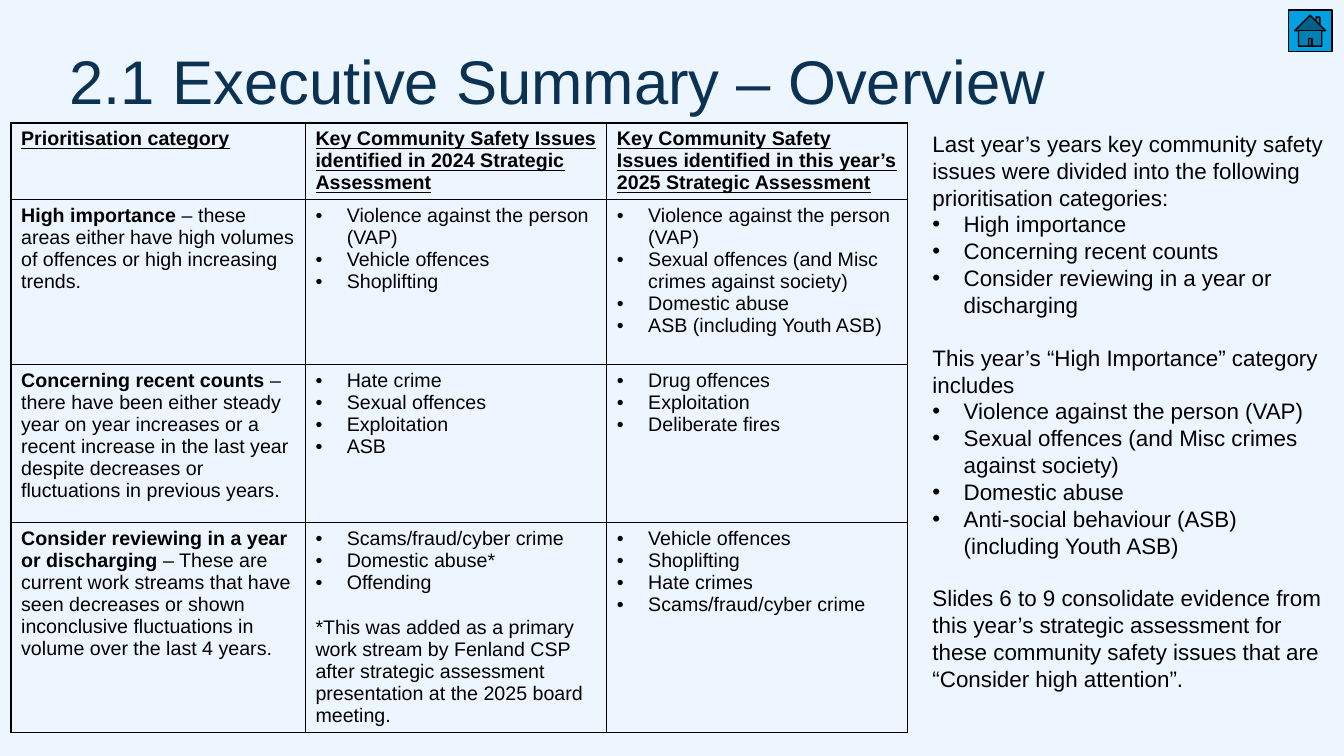
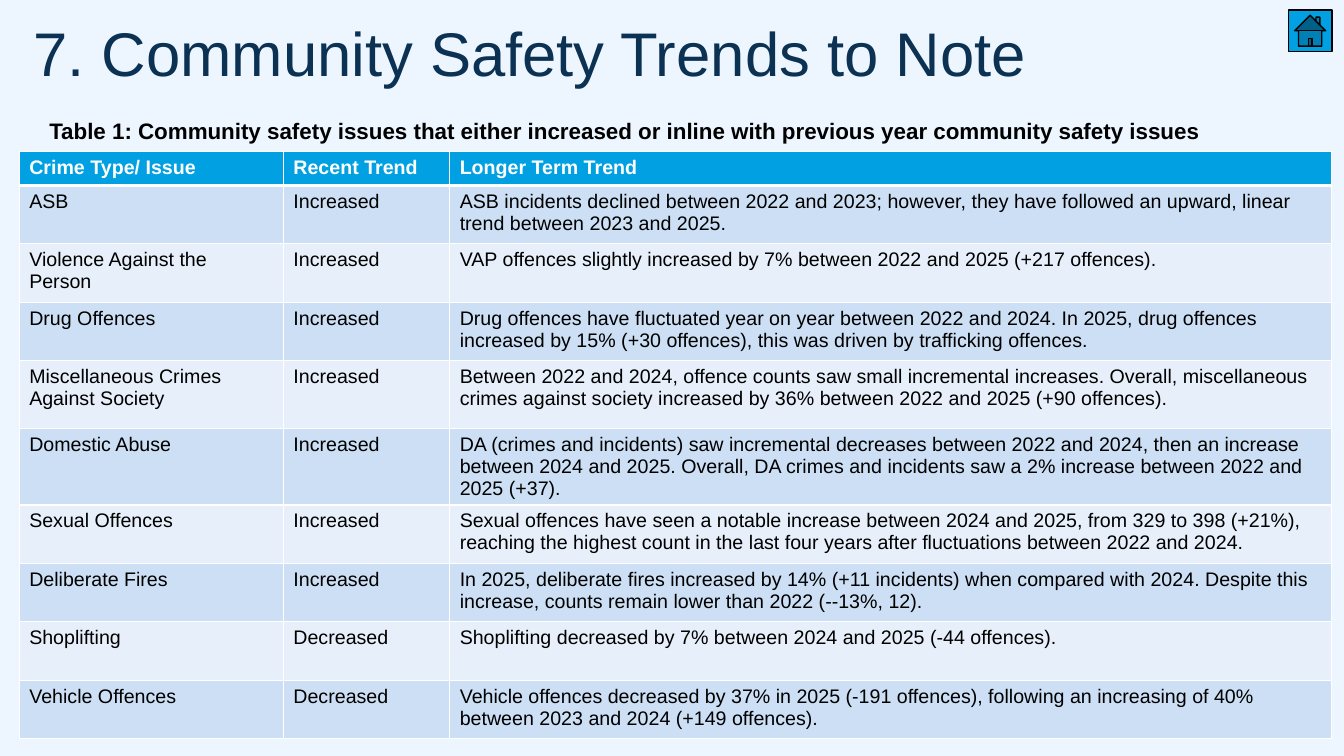
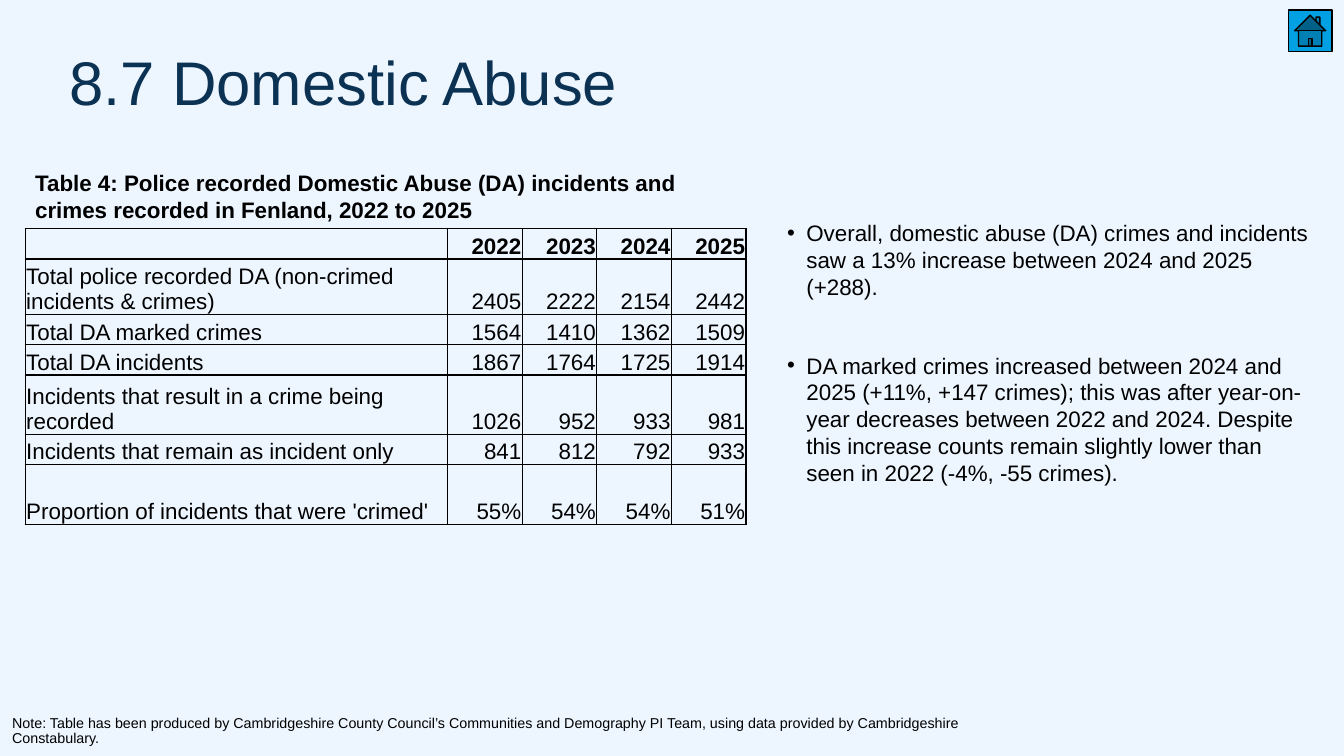
from dataclasses import dataclass

from lxml.etree import SubElement
from pptx import Presentation
from pptx.dml.color import RGBColor
from pptx.enum.shapes import MSO_SHAPE
from pptx.enum.text import MSO_ANCHOR, MSO_AUTO_SIZE, PP_ALIGN
from pptx.oxml.ns import qn
from pptx.util import Inches, Pt


@dataclass(frozen=True)
class Theme:
    font: str = "Arial"
    background: str = "EDF6FF"
    title: str = "0B3153"
    ink: str = "000000"
    white: str = "FFFFFF"
    accent: str = "00A0E2"
    bands: tuple = ("CCDFF4", "E7F0FA")
    title_size: float = 44
    body_size: float = 16
    table_size: float = 14
    note_size: float = 10.2


THEME = Theme()


@dataclass(frozen=True)
class Para:
    """One paragraph: an optional bold lead-in, then the text."""
    text: str
    lead: str = ""
    bullet: bool = False
    before: float = 0


@dataclass(frozen=True)
class Style:
    size: float = THEME.body_size
    color: str = THEME.ink
    bold: bool = False
    underline: bool = False
    align: PP_ALIGN = PP_ALIGN.LEFT
    spacing: float = 1.0
    indent: float = 0.31


BODY = Style()
CAPTION = Style(bold=True)
CELL = Style(size=THEME.table_size)


def bullets(*texts):
    return [Para(text, bullet=True) for text in texts]


def rgb(value):
    return RGBColor.from_string(value)


def add_bullet(paragraph, indent):
    props = paragraph._p.get_or_add_pPr()
    props.set("marL", str(Inches(indent)))
    props.set("indent", str(-Inches(indent)))
    SubElement(props, qn("a:buFont")).set("typeface", THEME.font)
    SubElement(props, qn("a:buChar")).set("char", "•")


def write(frame, content, style):
    """Fill a text frame from a string or a list of Para."""
    paras = [Para(content)] if isinstance(content, str) else content
    for number, para in enumerate(paras):
        paragraph = frame.add_paragraph() if number else frame.paragraphs[0]
        if para.bullet:
            add_bullet(paragraph, style.indent)
        paragraph.alignment = style.align
        paragraph.line_spacing = style.spacing
        paragraph.space_before = Pt(para.before)
        font = paragraph.font
        font.name, font.size = THEME.font, Pt(style.size)
        font.bold, font.underline = style.bold, style.underline
        font.color.rgb = rgb(style.color)
        if para.lead:
            lead = paragraph.add_run()
            lead.text = para.lead
            lead.font.bold = True
        if para.text:
            paragraph.add_run().text = para.text


def set_insets(holder, left, top, right, bottom):
    holder.margin_left, holder.margin_top = Inches(left), Inches(top)
    holder.margin_right, holder.margin_bottom = Inches(right), Inches(bottom)


def add_text(slide, box, content, style=BODY):
    frame = slide.shapes.add_textbox(*map(Inches, box)).text_frame
    frame.word_wrap = True
    write(frame, content, style)
    return frame


def add_home_button(slide):
    button = slide.shapes.add_shape(
        MSO_SHAPE.ACTION_BUTTON_HOME, *map(Inches, (12.78, 0.1, 0.43, 0.41)))
    button.shadow.inherit = False
    button.fill.solid()
    button.fill.fore_color.rgb = rgb(THEME.accent)
    button.line.color.rgb = rgb(THEME.ink)
    button.line.width = Pt(1)


def add_titled_slide(prs, title, left, top):
    slide = prs.slides.add_slide(prs.slide_layouts[5])
    heading = slide.shapes.title
    heading.left, heading.top = Inches(left), Inches(top)
    heading.width, heading.height = Inches(11.5), Inches(1.33)
    frame = heading.text_frame
    frame.auto_size = MSO_AUTO_SIZE.NONE
    frame.vertical_anchor = MSO_ANCHOR.TOP
    set_insets(frame, 0, 0, 0, 0)
    write(frame, title, Style(THEME.title_size, THEME.title, spacing=0.9))
    add_home_button(slide)
    return slide


def set_borders(cell, color, bottom_width=1):
    props = cell._tc.get_or_add_tcPr()
    for side, width in (("L", 1), ("R", 1), ("T", 1), ("B", bottom_width)):
        line = SubElement(props, qn(f"a:ln{side}"), w=str(Pt(width)))
        fill = SubElement(line, qn("a:solidFill"))
        SubElement(fill, qn("a:srgbClr"), val=color)


def add_table(slide, left, top, widths, heights, rows, format_cell):
    """Place a table; format_cell(cell, row, column) styles a cell and returns its text style."""
    table = slide.shapes.add_table(
        len(rows), len(widths), Inches(left), Inches(top),
        Inches(sum(widths)), Inches(sum(heights))).table
    table.horz_banding = False
    for column, width in zip(table.columns, widths):
        column.width = Inches(width)
    for row, height in zip(table.rows, heights):
        row.height = Inches(height)
    for r, row in enumerate(rows):
        for c, content in enumerate(row):
            cell = table.cell(r, c)
            write(cell.text_frame, content, format_cell(cell, r, c))


def format_priority_cell(cell, row, column):
    set_borders(cell, THEME.ink)
    cell.fill.background()
    return Style(THEME.table_size, bold=True, underline=True) if row == 0 else CELL


def format_trend_cell(cell, row, column):
    set_borders(cell, THEME.white, 3 if row == 0 else 1)
    cell.fill.solid()
    cell.fill.fore_color.rgb = rgb(THEME.bands[(row - 1) % 2] if row else THEME.accent)
    return CELL if row else Style(THEME.table_size, THEME.white, bold=True)


def format_count_cell(cell, row, column):
    set_borders(cell, THEME.ink)
    cell.fill.background()
    cell.vertical_anchor = MSO_ANCHOR.BOTTOM
    set_insets(cell, 0.01, 0.01, 0.01, 0)
    return Style(bold=row == 0, align=PP_ALIGN.RIGHT if column else PP_ALIGN.LEFT)


PRIORITIES = [
    ("Prioritisation category",
     "Key Community Safety Issues identified in 2024 Strategic Assessment",
     "Key Community Safety Issues identified in this year’s 2025 Strategic Assessment"),
    ([Para("– these areas either have high volumes of offences or high increasing trends.",
           lead="High importance ")],
     bullets("Violence against the person (VAP)", "Vehicle offences", "Shoplifting"),
     bullets("Violence against the person (VAP)",
             "Sexual offences (and Misc crimes against society)",
             "Domestic abuse", "ASB (including Youth ASB)")),
    ([Para(" – there have been either steady year on year increases or a recent increase in "
           "the last year despite decreases or fluctuations in previous years.",
           lead="Concerning recent counts")],
     bullets("Hate crime", "Sexual offences", "Exploitation", "ASB"),
     bullets("Drug offences", "Exploitation", "Deliberate fires")),
    ([Para("– These are current work streams that have seen decreases or shown inconclusive "
           "fluctuations in volume over the last 4 years.",
           lead="Consider reviewing in a year or discharging ")],
     bullets("Scams/fraud/cyber crime", "Domestic abuse*", "Offending")
     + [Para("*This was added as a primary work stream by Fenland CSP after strategic "
             "assessment presentation at the 2025 board meeting.", before=16)],
     bullets("Vehicle offences", "Shoplifting", "Hate crimes", "Scams/fraud/cyber crime")),
]

OVERVIEW = [
    Para("Last year’s years key community safety issues were divided into the following "
         "prioritisation categories:"),
    *bullets("High importance", "Concerning recent counts",
             "Consider reviewing in a year or discharging"),
    Para("This year’s “High Importance” category includes", before=18.4),
    *bullets("Violence against the person (VAP)",
             "Sexual offences (and Misc crimes against society)",
             "Domestic abuse", "Anti-social behaviour (ASB) (including Youth ASB)"),
    Para("Slides 6 to 9 consolidate evidence from this year’s strategic assessment for these "
         "community safety issues that are “Consider high attention”.", before=18.4),
]

TRENDS = [
    ("Crime Type/ Issue", "Recent Trend", "Longer Term Trend"),
    ("ASB", "Increased",
     "ASB incidents declined between 2022 and 2023; however, they have followed an upward, "
     "linear trend between 2023 and 2025."),
    ("Violence Against the Person", "Increased",
     "VAP offences slightly increased by 7% between 2022 and 2025 (+217 offences)."),
    ("Drug Offences", "Increased",
     "Drug offences have fluctuated year on year between 2022 and 2024. In 2025, drug offences "
     "increased by 15% (+30 offences), this was driven by trafficking offences."),
    ("Miscellaneous Crimes Against Society", "Increased",
     "Between 2022 and 2024, offence counts saw small incremental increases. Overall, "
     "miscellaneous crimes against society increased by 36% between 2022 and 2025 "
     "(+90 offences)."),
    ("Domestic Abuse", "Increased",
     "DA (crimes and incidents) saw incremental decreases between 2022 and 2024, then an "
     "increase between 2024 and 2025. Overall, DA crimes and incidents saw a 2% increase "
     "between 2022 and 2025 (+37)."),
    ("Sexual Offences", "Increased",
     "Sexual offences have seen a notable increase between 2024 and 2025, from 329 to 398 "
     "(+21%), reaching the highest count in the last four years after fluctuations between "
     "2022 and 2024."),
    ("Deliberate Fires", "Increased",
     "In 2025, deliberate fires increased by 14% (+11 incidents) when compared with 2024. "
     "Despite this increase, counts remain lower than 2022 (--13%, 12)."),
    ("Shoplifting", "Decreased",
     "Shoplifting decreased by 7% between 2024 and 2025 (-44 offences)."),
    ("Vehicle Offences", "Decreased",
     "Vehicle offences decreased by 37% in 2025 (-191 offences), following an increasing of "
     "40% between 2023 and 2024 (+149 offences)."),
]

ABUSE_COUNTS = [
    ("", "2022", "2023", "2024", "2025"),
    ("Total police recorded DA (non-crimed incidents & crimes)",
     "2405", "2222", "2154", "2442"),
    ("Total DA marked crimes", "1564", "1410", "1362", "1509"),
    ("Total DA incidents", "1867", "1764", "1725", "1914"),
    ("Incidents that result in a crime being recorded", "1026", "952", "933", "981"),
    ("Incidents that remain as incident only", "841", "812", "792", "933"),
    ("Proportion of incidents that were 'crimed'", "55%", "54%", "54%", "51%"),
]

ABUSE_FINDINGS = [
    Para("Overall, domestic abuse (DA) crimes and incidents saw a 13% increase between 2024 "
         "and 2025 (+288).", bullet=True),
    Para("DA marked crimes increased between 2024 and 2025 (+11%, +147 crimes); this was after "
         "year-on-year decreases between 2022 and 2024. Despite this increase counts remain "
         "slightly lower than seen in 2022 (-4%, -55 crimes).", bullet=True, before=36.8),
]


def add_overview_slide(prs):
    slide = add_titled_slide(prs, "2.1 Executive Summary – Overview", 0.69, 0.51)
    add_table(slide, 0.11, 1.22, (2.92, 2.99, 2.98), (0.75, 1.64, 1.57, 2.08),
              PRIORITIES, format_priority_cell)
    add_text(slide, (9.15, 1.24, 4.22, 5.76), OVERVIEW)


def add_trends_slide(prs):
    slide = add_titled_slide(prs, "7. Community Safety Trends to Note", 0.33, 0.23)
    heights = [0.34] + [0.58] * 3 + [0.67, 0.76] + [0.58] * 4
    add_table(slide, 0.19, 1.5, (2.62, 1.65, 8.75), heights, TRENDS, format_trend_cell)
    add_text(slide, (0.39, 1.11, 12.62, 0.37),
             "Table 1: Community safety issues that either increased or inline with previous "
             "year community safety issues", CAPTION)


def add_abuse_slide(prs):
    slide = add_titled_slide(prs, "8.7 Domestic Abuse", 0.69, 0.52)
    add_text(slide, (0.25, 1.63, 6.91, 0.64),
             "Table 4: Police recorded Domestic Abuse (DA) incidents and crimes recorded in "
             "Fenland, 2022 to 2025", CAPTION)
    add_table(slide, 0.25, 2.27, [4.19] + [0.74] * 4, (0.3, 0.55, 0.3, 0.3, 0.59, 0.3, 0.59),
              ABUSE_COUNTS, format_count_cell)
    add_text(slide, (7.71, 2.13, 5.37, 3.3), ABUSE_FINDINGS, Style(indent=0.19))
    note = add_text(slide, (0.12, 7.11, 10.25, 0.3),
                    "Note: Table has been produced by Cambridgeshire County Council’s "
                    "Communities and Demography PI Team, using data provided by "
                    "Cambridgeshire Constabulary.", Style(THEME.note_size, spacing=0.9))
    note.vertical_anchor = MSO_ANCHOR.BOTTOM
    set_insets(note, 0, 0, 0, 0)


def main():
    prs = Presentation()
    prs.slide_width, prs.slide_height = Inches(13.33), Inches(7.5)
    background = prs.slide_master.background.fill
    background.solid()
    background.fore_color.rgb = rgb(THEME.background)
    add_overview_slide(prs)
    add_trends_slide(prs)
    add_abuse_slide(prs)
    prs.save("out.pptx")


if __name__ == "__main__":
    main()
